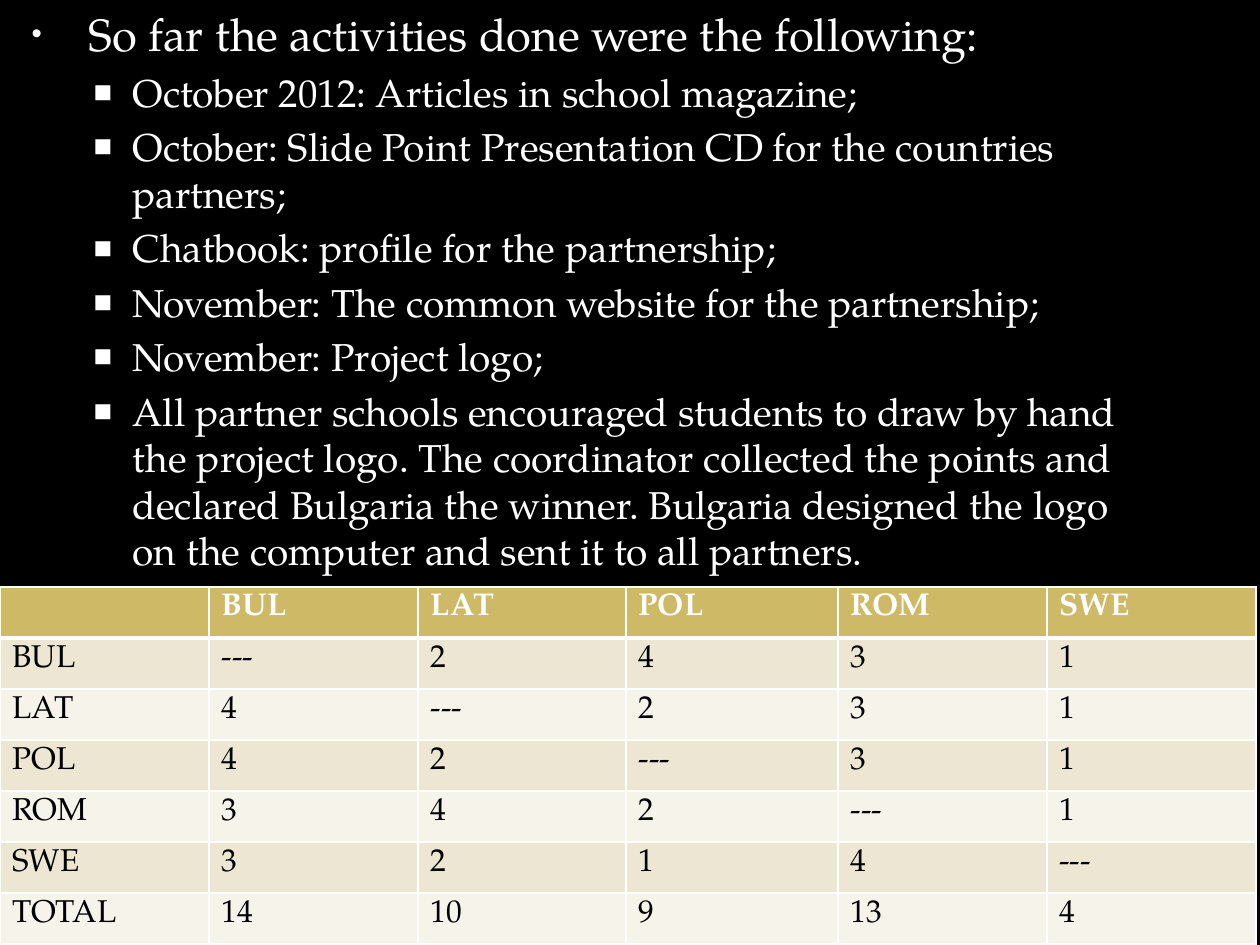
from lxml import etree
from pptx import Presentation
from pptx import util as u
from pptx.dml.color import RGBColor
from pptx.enum import text
from pptx.oxml.ns import qn

PX = 914400 / 126
FONT = "TeX Gyre Pagella"
COLORS = {
    "background": "000000", "white": "FFFFFF", "bullet": "F9F9F9", "ink": "000000",
    "header": "CEB966", "dark band": "EDE6D3", "light band": "F6F3EA",
}
HEADING = "So far the activities done were the following:"
ACTIVITIES = [
    "October 2012: Articles in school magazine;",
    "October: Slide Point Presentation CD for the countries partners;",
    "Chatbook: profile for the partnership;",
    "November: The common website for the partnership;",
    "November: Project logo;",
    "All partner schools encouraged students to draw by hand the project logo. "
    "The coordinator collected the points and declared Bulgaria the winner. "
    "Bulgaria designed the logo on the computer and sent it to all partners.",
]
VOTES = [
    ["", "BUL", "LAT", "POL", "ROM", "SWE"],
    ["BUL", "---", "2", "4", "3", "1"],
    ["LAT", "4", "---", "2", "3", "1"],
    ["POL", "4", "2", "---", "3", "1"],
    ["ROM", "3", "4", "2", "---", "1"],
    ["SWE", "3", "2", "1", "4", "---"],
    ["TOTAL", "14", "10", "9", "13", "4"],
]
COLUMN_WIDTHS = [209, 209, 208, 212, 209, 209]


def px(length):
    return u.Emu(round(length * PX))


def rgb(name):
    return RGBColor.from_string(COLORS[name])


def style_runs(paragraph, size, color, bold=False):
    for run in paragraph.runs:
        run.font.name = FONT
        run.font.size = u.Pt(size)
        run.font.bold = bold
        run.font.color.rgb = rgb(color)


def set_bullet(paragraph, char, color, percent, margin, hanging):
    properties = paragraph._p.get_or_add_pPr()
    properties.set("marL", str(px(margin)))
    properties.set("indent", str(-px(hanging)))
    bullet_color = etree.SubElement(properties, qn("a:buClr"))
    etree.SubElement(bullet_color, qn("a:srgbClr"), val=COLORS[color])
    etree.SubElement(properties, qn("a:buSzPct"), val=str(percent * 1000))
    etree.SubElement(properties, qn("a:buFont"), typeface="Arial")
    etree.SubElement(properties, qn("a:buChar"), char=char)


def set_borders(cell, bottom):
    """Draw white cell borders, 1 pt but for the bottom one."""
    properties = cell._tc.get_or_add_tcPr()
    widths = {"a:lnL": 1, "a:lnR": 1, "a:lnT": 1, "a:lnB": bottom}
    for position, (tag, width) in enumerate(widths.items()):
        line = etree.Element(qn(tag), w=str(u.Pt(width)))
        fill = etree.SubElement(line, qn("a:solidFill"))
        etree.SubElement(fill, qn("a:srgbClr"), val=COLORS["white"])
        properties.insert(position, line)


def fill_activities(body, left, top, width, height):
    body.left, body.top, body.width, body.height = map(px, (left, top, width, height))
    frame = body.text_frame
    frame.word_wrap = True
    frame.auto_size = text.MSO_AUTO_SIZE.NONE
    frame.text = "\n".join([HEADING, *ACTIVITIES])
    heading, *activities = frame.paragraphs
    style_runs(heading, 25.9, "white")
    set_bullet(heading, "•", "bullet", 65, margin=76, hanging=57)
    for activity in activities:
        activity.level = 1
        style_runs(activity, 22.2, "white")
        set_bullet(activity, "■", "white", 80, margin=120, hanging=39)


def add_votes(slide, left, top, width, height):
    votes = slide.shapes.add_table(
        len(VOTES), len(VOTES[0]), *map(px, (left, top, width, height))).table
    for column, column_width in zip(votes.columns, COLUMN_WIDTHS):
        column.width = px(column_width)
    for r, values in enumerate(VOTES):
        votes.rows[r].height = px(height / len(VOTES))
        is_header = r == 0
        band = "header" if is_header else "dark band" if r % 2 else "light band"
        for c, value in enumerate(values):
            cell = votes.cell(r, c)
            cell.text_frame.text = value
            style_runs(cell.text_frame.paragraphs[0], 18,
                       "white" if is_header else "ink", bold=is_header)
            cell.fill.solid()
            cell.fill.fore_color.rgb = rgb(band)
            set_borders(cell, bottom=3 if is_header else 1)
            if r == 1:
                cell._tc.tcPr.find(qn("a:lnT")).set("w", str(u.Pt(3)))


def main():
    deck = Presentation()
    deck.slide_width, deck.slide_height = px(1260), px(945)
    slide = deck.slides.add_slide(deck.slide_layouts[1])
    slide.background.fill.solid()
    slide.background.fill.fore_color.rgb = rgb("background")
    title = slide.shapes.title
    title._element.getparent().remove(title._element)
    fill_activities(slide.placeholders[1], 0, 0, 1134, 582)
    add_votes(slide, 0, 587, sum(COLUMN_WIDTHS), 357)
    deck.save("out.pptx")


if __name__ == "__main__":
    main()
